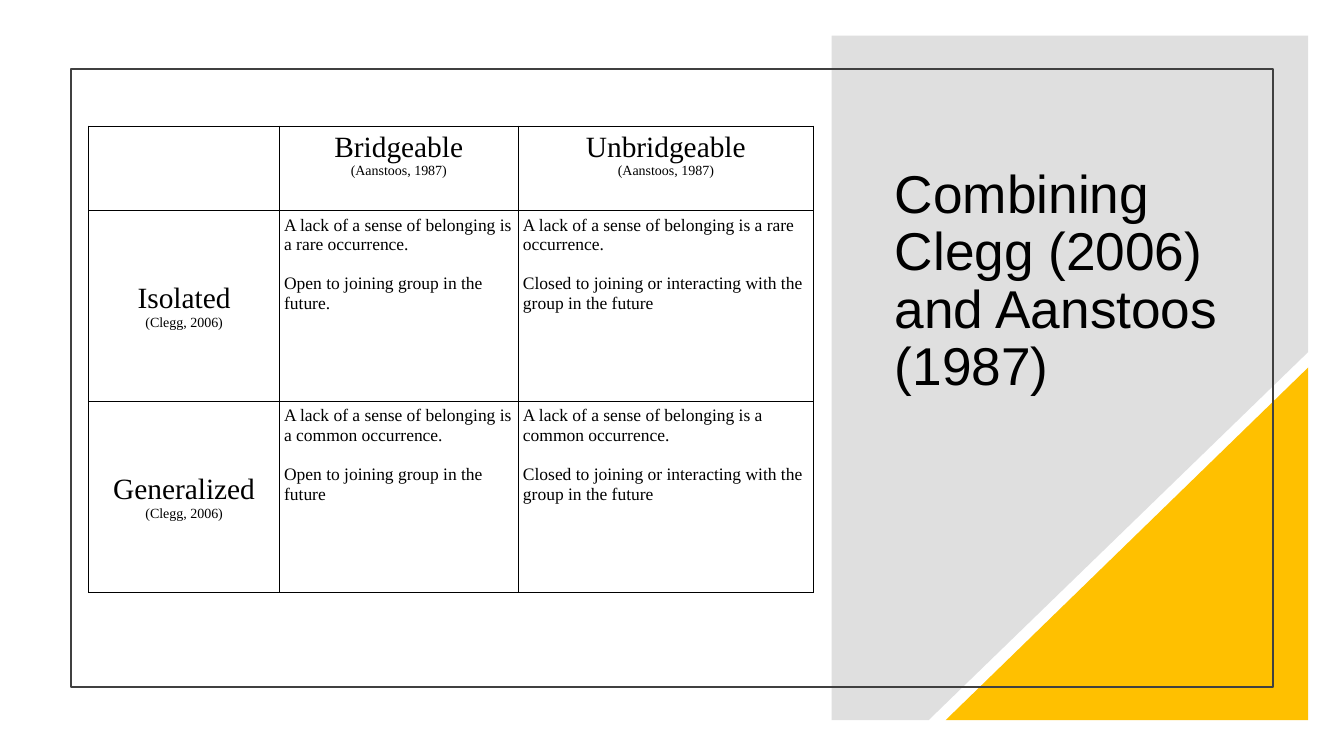
from lxml.etree import SubElement
from pptx import Presentation
from pptx.dml.color import RGBColor
from pptx.enum.shapes import MSO_SHAPE as Shape
from pptx.enum.text import MSO_ANCHOR as Anchor, PP_ALIGN as Align
from pptx.oxml.ns import qn
from pptx.util import Cm, Pt

BLACK = "000000"
SERIF = "Times New Roman"
COLUMN_WIDTHS = (4.8, 6.02, 7.44)
ROW_HEIGHTS = (2.13, 4.81, 4.81)
HEADINGS = (("Bridgeable", "(Aanstoos, 1987)"), ("Unbridgeable", "(Aanstoos, 1987)"))
ROWS = (
    (("Isolated", "(Clegg, 2006)"),
     ("A lack of a sense of belonging is a rare occurrence.",
      "Open to joining group in the future."),
     ("A lack of a sense of belonging is a rare occurrence.",
      "Closed to joining or interacting with the group in the future")),
    (("Generalized", "(Clegg, 2006)"),
     ("A lack of a sense of belonging is a common occurrence.",
      "Open to joining group in the future"),
     ("A lack of a sense of belonging is a common occurrence.",
      "Closed to joining or interacting with the group in the future")),
)


def color(value):
    return RGBColor.from_string(value)


def set_font(para, name, size):
    para.font.name = name
    para.font.size = Pt(size)
    para.font.color.rgb = color(BLACK)


def paint(shape, fill=None, line=None):
    shape.shadow.inherit = False
    if fill:
        shape.fill.solid()
        shape.fill.fore_color.rgb = color(fill)
    else:
        shape.fill.background()
    if line:
        shape.line.color.rgb = color(line)
        shape.line.width = Pt(1.5)
    else:
        shape.line.fill.background()


def add_panel(page):
    corners = [(20.96, 0.9), (32.97, 0.9), (32.97, 8.87), (23.4, 18.15), (20.96, 18.15)]
    points = [(Cm(x), Cm(y)) for x, y in corners]
    builder = page.shapes.build_freeform(*points[0], scale=1.0)
    builder.add_line_segments(points[1:], close=True)
    panel = builder.convert_to_shape()
    paint(panel, fill="808080")
    tint = panel.element.spPr.find(qn("a:solidFill"))[0]
    SubElement(tint, qn("a:alpha"), val="25000")


def add_corner(page):
    corner = page.shapes.add_shape(
        Shape.RIGHT_TRIANGLE, Cm(23.83), Cm(9.26), Cm(9.14), Cm(8.89))
    corner.element.spPr.find(qn("a:xfrm")).set("flipH", "1")
    paint(corner, fill="FFC000")


def add_frame(page):
    frame = page.shapes.add_shape(
        Shape.RECTANGLE, Cm(1.78), Cm(1.74), Cm(30.3), Cm(15.57))
    paint(frame, line="404040")


def add_title(page, text):
    box = page.shapes.add_textbox(Cm(22.3), Cm(2.24), Cm(9.32), Cm(7.9))
    frame = box.text_frame
    frame.word_wrap = True
    frame.vertical_anchor = Anchor.BOTTOM
    para = frame.paragraphs[0]
    para.text = text
    para.line_spacing = 0.9
    para.space_after = Pt(6)
    set_font(para, "Arial", 38)


def add_borders(cell):
    properties = cell._tc.get_or_add_tcPr()
    for position, side in enumerate(("lnL", "lnR", "lnT", "lnB")):
        line = SubElement(properties, qn(f"a:{side}"), w=str(Pt(1)))
        fill = SubElement(line, qn("a:solidFill"))
        SubElement(fill, qn("a:srgbClr"), val=BLACK)
        properties.insert(position, line)


def fill_cell(cell, lines, heading):
    cell.margin_left = cell.margin_right = Cm(0.12)
    cell.margin_top = cell.margin_bottom = Cm(0.12)
    cell.fill.background()
    add_borders(cell)
    frame = cell.text_frame
    for index, text in enumerate(lines):
        para = frame.paragraphs[0] if index == 0 else frame.add_paragraph()
        para.text = text
        if heading:
            para.alignment = Align.CENTER
            set_font(para, SERIF, 10 if index else 21)
        else:
            set_font(para, SERIF, 12.5)
            para.space_before = Pt(14.4 if index else 0)


def add_matrix(page):
    frame = page.shapes.add_table(
        3, 3, Cm(2.24), Cm(3.18), Cm(sum(COLUMN_WIDTHS)), Cm(sum(ROW_HEIGHTS)))
    table = frame.table
    table.first_row = table.horz_banding = False
    for column, width in zip(table.columns, COLUMN_WIDTHS):
        column.width = Cm(width)
    for row, height in zip(table.rows, ROW_HEIGHTS):
        row.height = Cm(height)
    for r, contents in enumerate((((),) + HEADINGS,) + ROWS):
        for c, lines in enumerate(contents):
            cell = table.cell(r, c)
            fill_cell(cell, lines, heading=r == 0 or c == 0)
            if r and c == 0:
                cell.vertical_anchor = Anchor.MIDDLE


def main():
    deck = Presentation()
    deck.slide_width, deck.slide_height = Cm(33.87), Cm(19.05)
    page = deck.slides.add_slide(deck.slide_layouts[6])
    # Backdrop
    add_panel(page)
    add_corner(page)
    add_frame(page)
    # Content
    add_title(page, "Combining Clegg (2006) and Aanstoos (1987)")
    add_matrix(page)
    deck.save("out.pptx")


if __name__ == "__main__":
    main()
